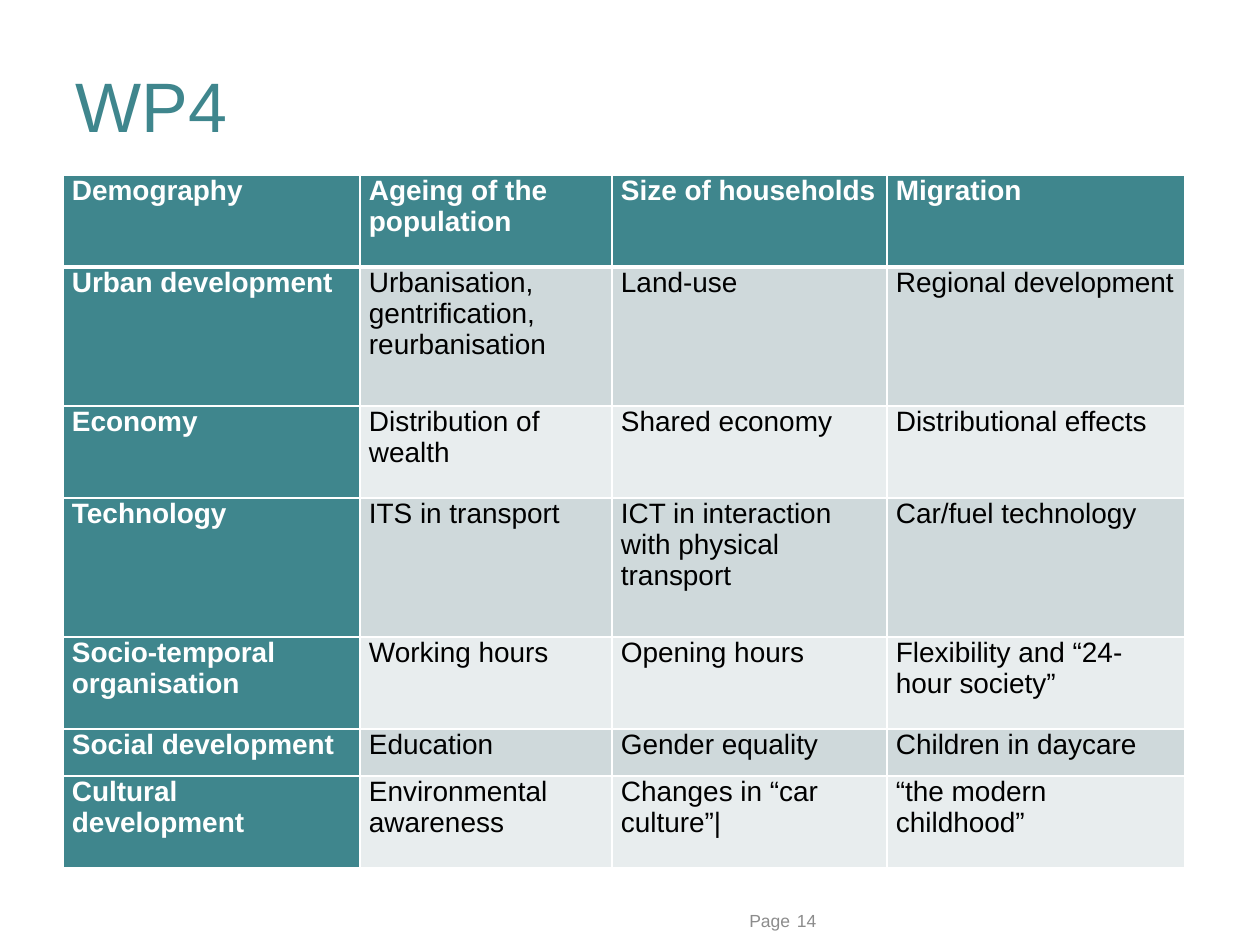
from lxml import etree
from pptx import Presentation
from pptx.dml.color import RGBColor
from pptx.enum.text import MSO_ANCHOR, PP_ALIGN
from pptx.oxml.ns import qn
from pptx.util import Pt

MIDDLE, TOP = MSO_ANCHOR.MIDDLE, MSO_ANCHOR.TOP
LEFT, RIGHT = PP_ALIGN.LEFT, PP_ALIGN.RIGHT
TITLE_ONLY = 5
EMU_PER_PX = 914400 / 126
FONT = "Arial"
COLOURS = {
    "teal": "3F868D",
    "dark band": "CFD9DB",
    "light band": "E8EDEE",
    "white": "FFFFFF",
    "black": "000000",
    "grey": "8C8C8C",
}
COLUMN_WIDTHS = [297, 252, 275, 298]
ROW_HEIGHTS = [92, 139, 92, 139, 92, 47, 92]
TOPICS = [
    ["Demography", "Ageing of the population", "Size of households", "Migration"],
    ["Urban development", "Urbanisation, gentrification, reurbanisation",
     "Land-use", "Regional development"],
    ["Economy", "Distribution of wealth", "Shared economy", "Distributional effects"],
    ["Technology", "ITS in transport",
     "ICT in interaction with physical transport", "Car/fuel technology"],
    ["Socio-temporal organisation", "Working hours", "Opening hours",
     "Flexibility and “24-hour society”"],
    ["Social development", "Education", "Gender equality", "Children in daycare"],
    ["Cultural development", "Environmental awareness",
     "Changes in “car culture”|", "“the modern childhood”"],
]


def px(length):
    return round(length * EMU_PER_PX)


def colour(name):
    return RGBColor.from_string(COLOURS[name])


def write(frame, text, size, ink, align=LEFT, bold=False):
    frame.text = text
    para = frame.paragraphs[0]
    para.alignment = align
    para.space_before = Pt(0)
    for span in para.runs:
        span.font.name = FONT
        span.font.size = Pt(size)
        span.font.bold = bold
        span.font.color.rgb = colour(ink)


def add_title(page, text):
    title = page.shapes.title
    title.left, title.top, title.width, title.height = map(px, (63, 26, 1134, 158))
    title.text_frame.vertical_anchor = MIDDLE
    write(title.text_frame, text, 40, "teal")


def add_footer(page, text, left, align):
    box = page.shapes.add_textbox(px(left), px(902), px(60), px(37))
    frame = box.text_frame
    frame.word_wrap = True
    frame.vertical_anchor = MIDDLE
    frame.margin_left = frame.margin_right = frame.margin_top = frame.margin_bottom = 0
    write(frame, text, 10, "grey", align)


def set_borders(cell, top, bottom):
    """Draw white cell borders; the widths are in points."""
    properties = cell._tc.get_or_add_tcPr()
    widths = {"a:lnL": 1, "a:lnR": 1, "a:lnT": top, "a:lnB": bottom}
    for position, (side, width) in enumerate(widths.items()):
        line = etree.Element(qn(side), w=str(Pt(width)))
        fill = etree.SubElement(line, qn("a:solidFill"))
        etree.SubElement(fill, qn("a:srgbClr"), val=COLOURS["white"])
        properties.insert(position, line)


def format_cell(cell, text, row, column):
    heading = row == 0 or column == 0
    band = "dark band" if row % 2 else "light band"
    cell.fill.solid()
    cell.fill.fore_color.rgb = colour("teal" if heading else band)
    cell.margin_left = cell.margin_right = px(9)
    cell.margin_top = cell.margin_bottom = 0
    cell.vertical_anchor = TOP
    write(cell.text_frame, text, 16, "white" if heading else "black", bold=heading)
    # A thicker rule separates the header from the body
    set_borders(cell, top=3 if row == 1 else 1, bottom=3 if row == 0 else 1)


def add_topic_table(page):
    table = page.shapes.add_table(
        len(ROW_HEIGHTS), len(COLUMN_WIDTHS), px(63), px(175),
        px(sum(COLUMN_WIDTHS)), px(sum(ROW_HEIGHTS))).table
    for column, width in zip(table.columns, COLUMN_WIDTHS):
        column.width = px(width)
    for row, height in zip(table.rows, ROW_HEIGHTS):
        row.height = px(height)
    for row, texts in enumerate(TOPICS):
        for column, text in enumerate(texts):
            format_cell(table.cell(row, column), text, row, column)


def main():
    deck = Presentation()
    deck.slide_width, deck.slide_height = px(1260), px(945)
    page = deck.slides.add_slide(deck.slide_layouts[TITLE_ONLY])

    # Title and table
    add_title(page, "WP4")
    add_topic_table(page)

    # Page number
    add_footer(page, "Page", 730, RIGHT)
    add_footer(page, "14", 797, LEFT)

    deck.save("out.pptx")


if __name__ == "__main__":
    main()
